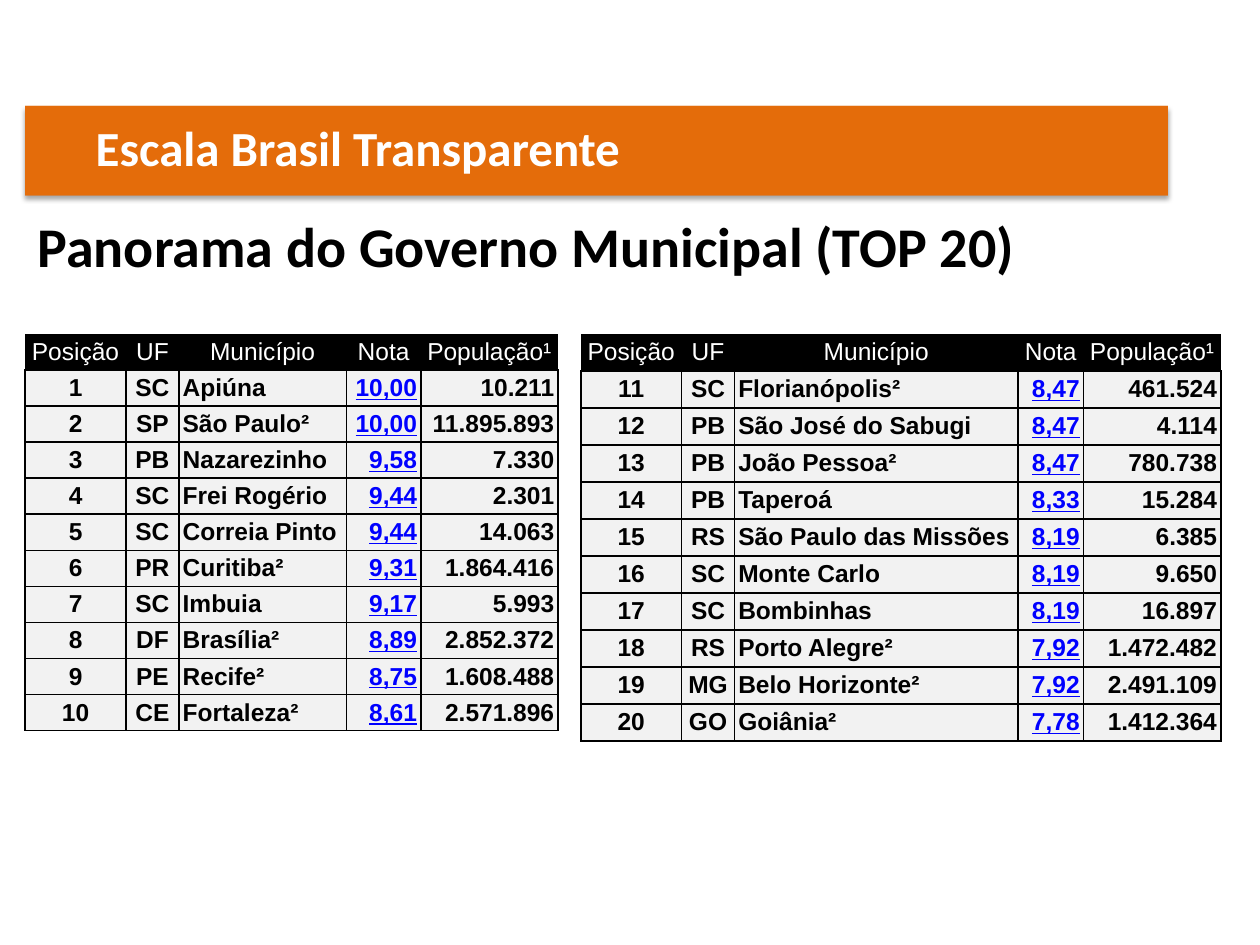
from lxml.etree import SubElement
from pptx import Presentation
from pptx.dml.color import RGBColor
from pptx.enum.shapes import MSO_SHAPE as Shape
from pptx.enum.text import MSO_ANCHOR as Anchor, PP_ALIGN as Align
from pptx.oxml.ns import qn
from pptx.util import Inches, Pt

BLACK = RGBColor(0x00, 0x00, 0x00)
WHITE = RGBColor(0xFF, 0xFF, 0xFF)
ORANGE = RGBColor(0xE4, 0x6C, 0x0A)
LIGHT_GRAY = RGBColor(0xF2, 0xF2, 0xF2)
LINK_BLUE = RGBColor(0x00, 0x00, 0xFF)

HEADERS = ["Posição", "UF", "Município", "Nota", "População¹"]
ALIGNMENTS = [Align.CENTER, Align.CENTER, Align.LEFT, Align.RIGHT, Align.RIGHT]
GRADE_COLUMN = HEADERS.index("Nota")
TOP_TEN = [
    ("SC", "Apiúna", "10,00", "10.211"),
    ("SP", "São Paulo²", "10,00", "11.895.893"),
    ("PB", "Nazarezinho", "9,58", "7.330"),
    ("SC", "Frei Rogério", "9,44", "2.301"),
    ("SC", "Correia Pinto", "9,44", "14.063"),
    ("PR", "Curitiba²", "9,31", "1.864.416"),
    ("SC", "Imbuia", "9,17", "5.993"),
    ("DF", "Brasília²", "8,89", "2.852.372"),
    ("PE", "Recife²", "8,75", "1.608.488"),
    ("CE", "Fortaleza²", "8,61", "2.571.896"),
]
NEXT_TEN = [
    ("SC", "Florianópolis²", "8,47", "461.524"),
    ("PB", "São José do Sabugi", "8,47", "4.114"),
    ("PB", "João Pessoa²", "8,47", "780.738"),
    ("PB", "Taperoá", "8,33", "15.284"),
    ("RS", "São Paulo das Missões", "8,19", "6.385"),
    ("SC", "Monte Carlo", "8,19", "9.650"),
    ("SC", "Bombinhas", "8,19", "16.897"),
    ("RS", "Porto Alegre²", "7,92", "1.472.482"),
    ("MG", "Belo Horizonte²", "7,92", "2.491.109"),
    ("GO", "Goiânia²", "7,78", "1.412.364"),
]


def style_font(font, name, size, color, bold):
    """Set the look of a font."""
    font.name, font.size, font.bold = name, Pt(size), bold
    font.color.rgb = color


def set_margins(target, left, top, right, bottom):
    """Set the inner margins of a cell or text frame in inches."""
    target.margin_left, target.margin_top = Inches(left), Inches(top)
    target.margin_right, target.margin_bottom = Inches(right), Inches(bottom)


def set_borders(cell, visible):
    """Give a cell thin black borders, or none at all."""
    properties = cell._tc.get_or_add_tcPr()
    for side in ("lnL", "lnR", "lnT", "lnB"):
        line = SubElement(properties, qn(f"a:{side}"), w=str(Pt(1)))
        if visible:
            fill = SubElement(line, qn("a:solidFill"))
            SubElement(fill, qn("a:srgbClr"), val=str(BLACK))
        else:
            SubElement(line, qn("a:noFill"))


def fill_cell(cell, text, alignment, color, background, bold):
    """Write and style one table cell."""
    cell.text = text
    cell.vertical_anchor = Anchor.MIDDLE
    set_margins(cell, 0.03, 0.03, 0.03, 0.03)
    cell.fill.solid()
    cell.fill.fore_color.rgb = background
    para = cell.text_frame.paragraphs[0]
    para.alignment = alignment
    style_font(para.font, "Arial", 14, color, bold)


def add_ranking(page, left, widths, first_position, cities):
    """Add a ranking table whose positions count up from the first one."""
    frame = page.shapes.add_table(len(cities) + 1, len(HEADERS), Inches(left),
                                  Inches(2.65), Inches(sum(widths)), Inches(3.15))
    table = frame.table
    table.first_row = table.horz_banding = False
    for column, width in zip(table.columns, widths):
        column.width = Inches(width)
    for index, header in enumerate(HEADERS):
        cell = table.cell(0, index)
        set_borders(cell, False)
        fill_cell(cell, header, Align.CENTER, WHITE, BLACK, False)
    for row, city in enumerate(cities, 1):
        values = (str(first_position + row - 1), *city)
        for index, (value, alignment) in enumerate(zip(values, ALIGNMENTS)):
            cell = table.cell(row, index)
            is_grade = index == GRADE_COLUMN
            set_borders(cell, True)
            fill_cell(cell, value, alignment, LINK_BLUE if is_grade else BLACK,
                      LIGHT_GRAY, True)
            if is_grade:
                cell.text_frame.paragraphs[0].font.underline = True


def add_bar(group):
    """Add an orange title bar to a group."""
    bar = group.shapes.add_shape(Shape.RECTANGLE, Inches(0.2), Inches(0.84),
                                 Inches(9.07), Inches(0.71))
    bar.shadow.inherit = False
    bar.fill.solid()
    bar.fill.fore_color.rgb = ORANGE
    bar.line.fill.background()
    return bar


def add_soft_shadow(shape):
    """Drop a soft shadow below a shape."""
    effects = shape._element.spPr.find(qn("a:effectLst"))
    shadow = SubElement(effects, qn("a:outerShdw"), blurRad=str(Pt(3.1)),
                        dist=str(Pt(1.8)), dir="5400000", rotWithShape="0")
    color = SubElement(shadow, qn("a:srgbClr"), val=str(BLACK))
    SubElement(color, qn("a:alpha"), val="35000")


def write_line(shape, text, size, color):
    """Write one bold left-aligned line, centred vertically."""
    frame = shape.text_frame
    frame.vertical_anchor = Anchor.MIDDLE
    para = frame.paragraphs[0]
    para.text = text
    para.alignment = Align.LEFT
    style_font(para.font, "Calibri", size, color, True)
    return para


def add_title_bar(page, text):
    """Add the shadowed bar with the title on top."""
    group = page.shapes.add_group_shape()
    add_soft_shadow(add_bar(group))
    bar = add_bar(group)
    set_margins(bar.text_frame, 0.56, 0.08, 0.08, 0.08)
    write_line(bar, text, 28, WHITE).line_spacing = 0.9


def add_heading(page, text):
    """Add the heading below the title bar."""
    box = page.shapes.add_textbox(Inches(0.2), Inches(1.55), Inches(8.03), Inches(0.79))
    box.text_frame.word_wrap = False
    write_line(box, text, 32, BLACK)


def main():
    """Build the slide and save the deck."""
    deck = Presentation()
    deck.slide_width, deck.slide_height = Inches(10), Inches(7.5)
    page = deck.slides.add_slide(deck.slide_layouts[6])
    add_ranking(page, 0.2, [0.8, 0.42, 1.33, 0.59, 1.09], 1, TOP_TEN)
    add_heading(page, "Panorama do Governo Municipal (TOP 20)")
    add_title_bar(page, "Escala Brasil Transparente")
    add_ranking(page, 4.61, [0.8, 0.42, 2.25, 0.52, 1.09], 11, NEXT_TEN)
    deck.save("out.pptx")


if __name__ == "__main__":
    main()
